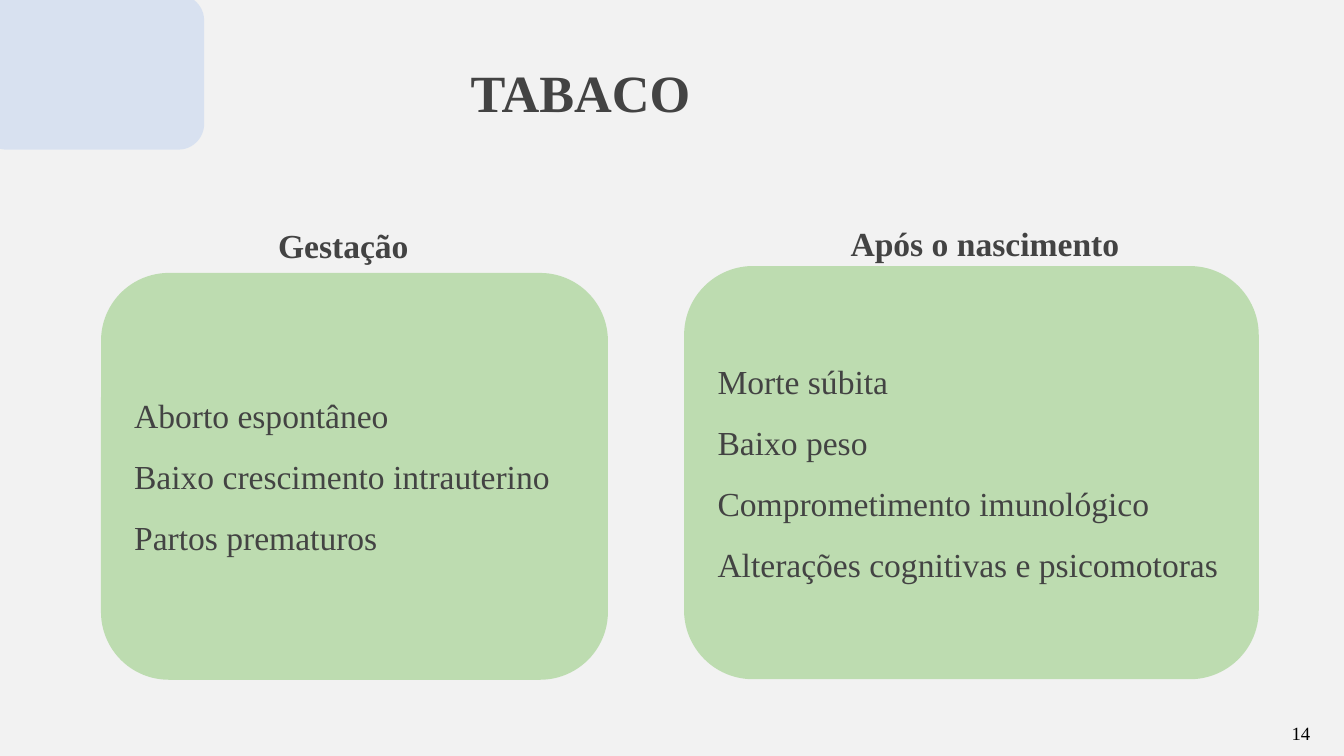
"""Build a slide on the effects of tobacco during pregnancy and after birth."""
from lxml import etree
from pptx import Presentation
from pptx.dml.color import RGBColor
from pptx.enum.shapes import MSO_SHAPE
from pptx.enum.text import MSO_ANCHOR, PP_ALIGN
from pptx.oxml.ns import qn
from pptx.util import Cm, Pt

ROUND = MSO_SHAPE.ROUNDED_RECTANGLE
TOP, MIDDLE = MSO_ANCHOR.TOP, MSO_ANCHOR.MIDDLE
LEFT, CENTER = PP_ALIGN.LEFT, PP_ALIGN.CENTER
FONT, INK, GREEN, BLUE = "Times New Roman", "434343", "ABD59A", "8CB1EE"


def panel(box, color, alpha):
    shape = slide.shapes.add_shape(ROUND, *map(Cm, box))
    shape.shadow.inherit = False
    shape.line.fill.background()
    shape.fill.solid()
    shape.fill.fore_color.rgb = RGBColor.from_string(color)
    tint = shape.fill._xPr.find(qn("a:solidFill"))[0]
    etree.SubElement(tint, qn("a:alpha")).set("val", str(alpha * 1000))
    return shape


def write(shape, text, size, bold=False, align=CENTER, anchor=TOP, color=INK, wrap=True):
    frame = shape.text_frame
    frame.text = text
    frame.word_wrap = wrap
    frame.vertical_anchor = anchor
    frame.margin_left = frame.margin_right = Cm(0.25)
    frame.margin_top = frame.margin_bottom = Cm(0.25 if wrap else 0.13)
    for i, para in enumerate(frame.paragraphs):
        para.alignment = align
        para.space_before = Pt(11 if i else 0)
        for run in para.runs:
            run.font.name = FONT
            run.font.size = Pt(size)
            run.font.bold = bold
            run.font.color.rgb = RGBColor.from_string(color)


deck = Presentation()
deck.slide_width, deck.slide_height = Cm(25.4), Cm(14.29)
slide = deck.slides.add_slide(deck.slide_layouts[5])
slide.background.fill.solid()
slide.background.fill.fore_color.rgb = RGBColor.from_string("F2F2F2")

panel((-0.36, -0.1, 4.22, 2.93), BLUE, 25)

title = slide.shapes.title
title.left, title.top, title.width, title.height = map(Cm, (4.39, 0.81, 13.16, 1.83))
write(title, "TABACO", 28, bold=True, anchor=MIDDLE)

groups = [
    ("Gestação", (2.59, 4.01, 7.8, 0.76), (1.91, 5.16, 9.58, 7.69),
     ["Aborto espontâneo", "Baixo crescimento intrauterino", "Partos prematuros"]),
    ("Após o nascimento", (15.01, 3.96, 7.21, 1.22), (12.93, 5.03, 10.86, 7.81),
     ["Morte súbita", "Baixo peso", "Comprometimento imunológico",
      "Alterações cognitivas e psicomotoras"]),
]
for name, head, body, items in groups:
    write(slide.shapes.add_textbox(*map(Cm, head)), name, 18, bold=True)
    write(panel(body, GREEN, 74), "\n".join(items), 18, align=LEFT, anchor=MIDDLE)

number = slide.shapes.add_textbox(Cm(24.16), Cm(13.51), Cm(0.86), Cm(0.69))
write(number, "14", 10, align=LEFT, color="000000", wrap=False)

deck.save("out.pptx")
